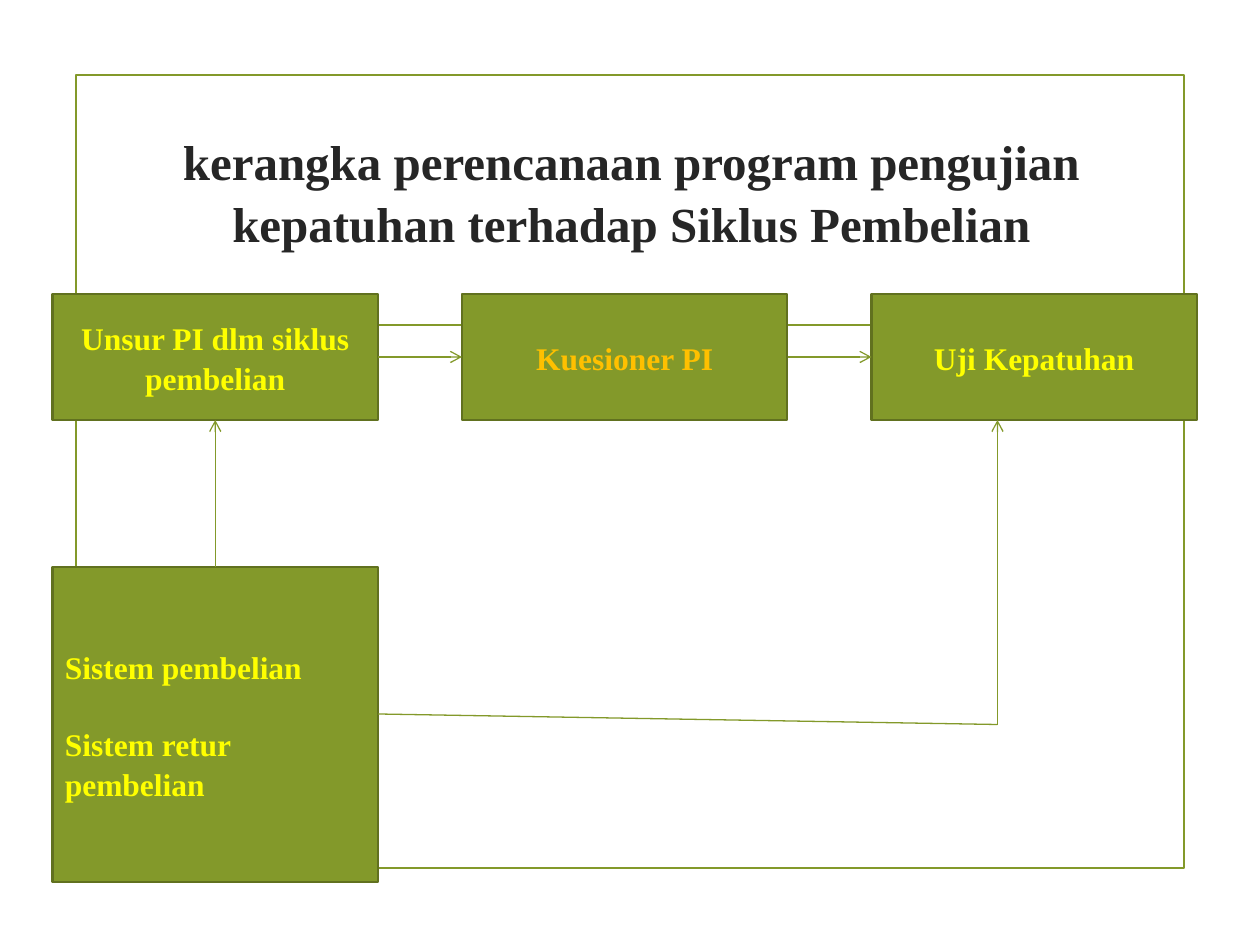
import pptx
import pptx.dml.color
import pptx.enum.shapes
import pptx.enum.text
import pptx.oxml
import pptx.oxml.ns
import pptx.util

Pt = pptx.util.Pt
ALIGN = pptx.enum.text.PP_ALIGN
RECTANGLE = pptx.enum.shapes.MSO_SHAPE.RECTANGLE
STRAIGHT = pptx.enum.shapes.MSO_CONNECTOR.STRAIGHT

FONT = "Times New Roman"
COLORS = {
    "green": "83992A",
    "dark green": "61711F",
    "title": "262626",
    "yellow": "FFFF00",
    "orange": "FFC000",
}
TITLE = "kerangka perencanaan program pengujian kepatuhan terhadap Siklus Pembelian"
STEPS = [
    ("Unsur PI dlm siklus pembelian", "yellow"),
    ("Kuesioner PI", "orange"),
    ("Uji Kepatuhan", "yellow"),
]
SYSTEMS = ["Sistem pembelian", "Sistem retur pembelian"]

BOX_LEFT, BOX_WIDTH, BOX_PITCH = 30, 186, 234
STEP_TOP, STEP_HEIGHT = 168, 72
STEP_BOTTOM = STEP_TOP + STEP_HEIGHT
SYSTEM_TOP, SYSTEM_HEIGHT = 324, 180
ARROW_Y = 204
TURN_X, TURN_Y = 570, 414


def color(name):
    return pptx.dml.color.RGBColor.from_string(COLORS[name])


def write(shape, lines, size, color_name, alignment, gap=0):
    """Fill a shape with bold paragraphs, with a gap in points between them."""
    frame = shape.text_frame
    frame.word_wrap = True
    frame.vertical_anchor = pptx.enum.text.MSO_ANCHOR.MIDDLE
    frame.text = "\n".join(lines)
    for index, paragraph in enumerate(frame.paragraphs):
        paragraph.alignment = alignment
        paragraph.line_spacing = 1.05
        paragraph.space_before = Pt(gap if index else 0)
        for run in paragraph.runs:
            run.font.name = FONT
            run.font.size = Pt(size)
            run.font.bold = True
            run.font.color.rgb = color(color_name)


def add_rectangle(slide, left, top, width, height, line, fill=None):
    shape = slide.shapes.add_shape(
        RECTANGLE, Pt(left), Pt(top), Pt(width), Pt(height))
    shape.shadow.inherit = False
    if fill:
        shape.fill.solid()
        shape.fill.fore_color.rgb = color(fill)
    else:
        shape.fill.background()
    shape.line.color.rgb = color(line)
    shape.line.width = Pt(1.25)
    return shape


def add_line(slide, start, end, width=0.75, arrow=False):
    connector = slide.shapes.add_connector(
        STRAIGHT, *(Pt(value) for value in start + end))
    connector.line.color.rgb = color("green")
    connector.line.width = Pt(width)
    if arrow:
        tail = pptx.oxml.parse_xml(
            f'<a:tailEnd {pptx.oxml.ns.nsdecls("a")} type="arrow"/>')
        connector.line._get_or_add_ln().append(tail)
    connector._element.spPr.append(pptx.oxml.parse_xml(
        f'<a:effectLst {pptx.oxml.ns.nsdecls("a")}/>'))


def add_title(slide):
    title = slide.shapes.title
    title.left, title.top = Pt(92.88), Pt(72)
    title.width, title.height = Pt(535.68), Pt(102.96)
    write(title, [TITLE], 28, "title", ALIGN.CENTER)
    title.text_frame.auto_size = pptx.enum.text.MSO_AUTO_SIZE.NONE
    title.text_frame.margin_bottom = Pt(33)


def add_boxes(slide):
    for index, (label, text_color) in enumerate(STEPS):
        box = add_rectangle(slide, BOX_LEFT + index * BOX_PITCH, STEP_TOP,
                            BOX_WIDTH, STEP_HEIGHT, "dark green", "green")
        write(box, [label], 18, text_color, ALIGN.CENTER)
    box = add_rectangle(slide, BOX_LEFT, SYSTEM_TOP, BOX_WIDTH, SYSTEM_HEIGHT,
                        "dark green", "green")
    write(box, SYSTEMS, 18, "yellow", ALIGN.LEFT, gap=21)


def add_arrows(slide):
    for index in range(1, len(STEPS)):
        next_left = BOX_LEFT + index * BOX_PITCH
        previous_right = next_left - BOX_PITCH + BOX_WIDTH
        add_line(slide, (previous_right, ARROW_Y), (next_left, ARROW_Y), arrow=True)
    center_x = BOX_LEFT + BOX_WIDTH / 2
    add_line(slide, (center_x, SYSTEM_TOP), (center_x, STEP_BOTTOM), arrow=True)
    system_side = (BOX_LEFT + BOX_WIDTH, SYSTEM_TOP + 84)
    add_line(slide, system_side, (TURN_X, TURN_Y))
    add_line(slide, (TURN_X, TURN_Y), (TURN_X, STEP_BOTTOM), arrow=True)


def main():
    presentation = pptx.Presentation()
    presentation.slide_width, presentation.slide_height = Pt(720), Pt(540)
    slide = presentation.slides.add_slide(presentation.slide_layouts[5])
    add_rectangle(slide, 43.6, 42.8, 633, 453.2, "green")
    add_line(slide, (101, 185.7), (620, 185.7), width=1.25)
    add_title(slide)
    add_boxes(slide)
    add_arrows(slide)
    presentation.save("out.pptx")


if __name__ == "__main__":
    main()
